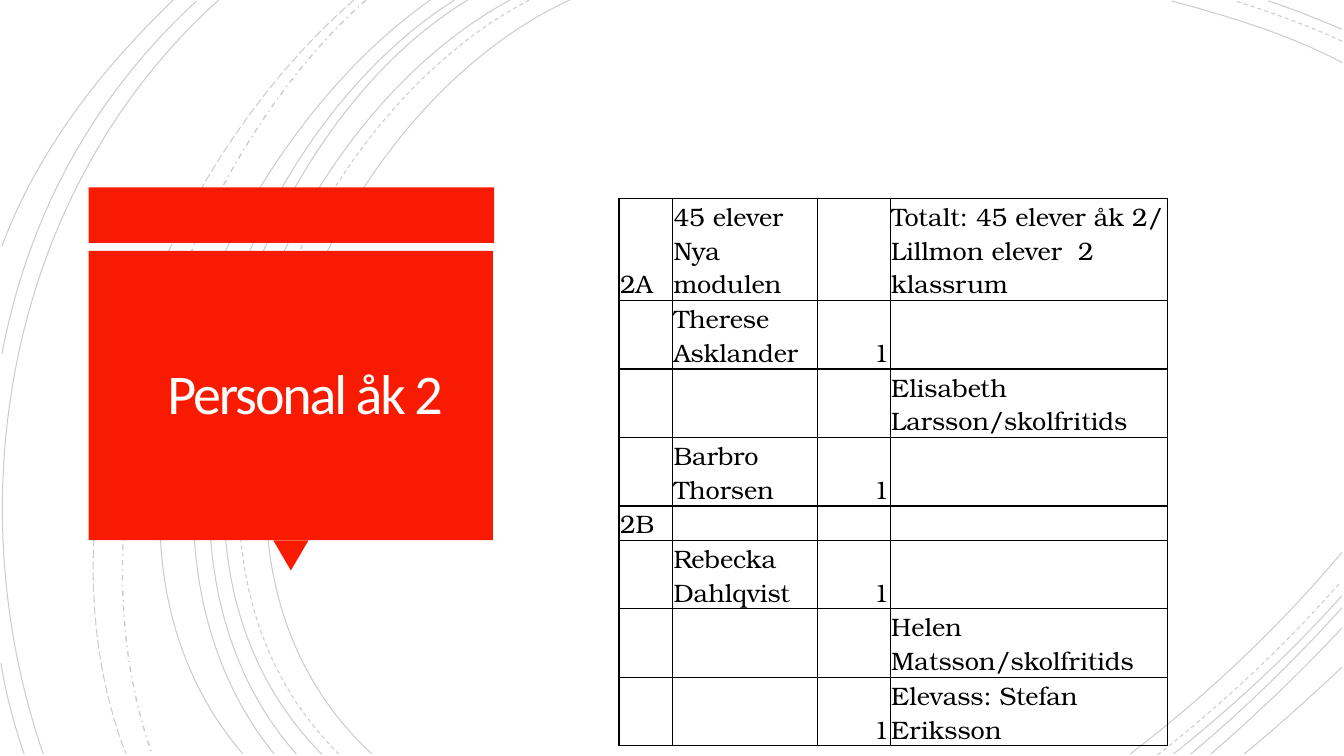
from lxml import etree
from pptx import Presentation
from pptx.dml.color import RGBColor
from pptx.enum.dml import MSO_LINE
from pptx.enum.shapes import MSO_SHAPE
from pptx.enum.text import MSO_ANCHOR, PP_ALIGN
from pptx.oxml import parse_xml
from pptx.oxml.ns import nsdecls, qn
from pptx.util import Inches, Pt

RED = RGBColor(0xF8, 0x1B, 0x02)
WHITE = RGBColor(0xFF, 0xFF, 0xFF)
BLACK = RGBColor(0x00, 0x00, 0x00)

SOLID, DASH = MSO_LINE.SOLID, MSO_LINE.DASH
LONG_DASH, DASH_DOT = MSO_LINE.LONG_DASH, MSO_LINE.DASH_DOT
RECTANGLE, TRIANGLE = MSO_SHAPE.RECTANGLE, MSO_SHAPE.ISOSCELES_TRIANGLE
MIDDLE, BOTTOM = MSO_ANCHOR.MIDDLE, MSO_ANCHOR.BOTTOM
LEFT, CENTER, RIGHT = PP_ALIGN.LEFT, PP_ALIGN.CENTER, PP_ALIGN.RIGHT

# Start, two control points and end of each arc, then its dash and width
ARCS = [
    ((5.65, 0), (3.15, 1.15), (1.43, 5.4), (3.69, 7.48), SOLID, 0.75),
    ((13.31, 0.62), (12.78, 0.34), (12.18, 0.16), (11.62, 0.01), SOLID, 0.75),
    ((11.21, 7.48), (11.97, 6.9), (12.69, 6.22), (13.31, 5.48), SOLID, 0.75),
    ((5.25, 0), (2.85, 1.25), (1.23, 5.37), (3.36, 7.48), DASH, 0.75),
    ((13.31, 0.41), (12.97, 0.25), (12.6, 0.12), (12.25, 0.01), DASH, 0.75),
    ((11.48, 7.49), (12.13, 6.98), (12.75, 6.4), (13.3, 5.77), DASH, 0.75),
    ((5.06, 0), (2.7, 1.27), (1.1, 5.37), (3.19, 7.48), SOLID, 0.75),
    ((13.31, 0.29), (13.07, 0.19), (12.83, 0.09), (12.58, 0.01), SOLID, 0.75),
    ((11.64, 7.48), (12.23, 7.01), (12.8, 6.48), (13.31, 5.91), SOLID, 0.75),
    ((4.64, 0), (2.44, 1.33), (1.1, 5.41), (2.94, 7.48), SOLID, 0.75),
    ((11.81, 7.48), (12.34, 7.04), (12.84, 6.55), (13.31, 6.03), SOLID, 0.75),
    ((4.51, 0), (2.31, 1.38), (0.97, 5.33), (2.72, 7.48), SOLID, 0.75),
    ((12.01, 7.48), (12.46, 7.09), (12.9, 6.67), (13.31, 6.23), SOLID, 0.75),
    ((4.27, 0), (2.17, 1.47), (0.53, 5.29), (2.41, 7.48), SOLID, 0.75),
    ((12.34, 7.48), (12.67, 7.21), (12.99, 6.92), (13.31, 6.62), SOLID, 0.75),
    ((3.63, 0), (1.76, 1.66), (0.65, 5.09), (1.51, 7.48), DASH_DOT, 1),
    ((3.51, 0), (1.57, 1.69), (0.29, 4.99), (1.25, 7.48), LONG_DASH, 0.75),
    ((2.17, 0), (0.11, 1.85), (-0.46, 4.9), (0.43, 7.48), SOLID, 0.75),
    ((1.95, 0.01), (0.92, 0.96), (0.28, 2.14), (0.02, 3.51), SOLID, 0.75),
    ((0.01, 6.58), (0.06, 6.89), (0.14, 7.19), (0.24, 7.48), SOLID, 0.75),
    ((1.72, 0), (1, 0.69), (0.37, 1.5), (0.02, 2.44), SOLID, 0.75),
]

# Row height, then the texts of its cells
STAFF = [
    (1.01, "2A", "45 elever  Nya modulen", "", "Totalt: 45 elever åk 2/ Lillmon elever  2 klassrum"),
    (0.68, "", "Therese Asklander", "1", ""),
    (0.68, "", "", "", "Elisabeth Larsson/skolfritids"),
    (0.68, "", "Barbro Thorsen", "1", ""),
    (0.34, "2B", "", "", ""),
    (0.68, "", "Rebecka Dahlqvist", "1", ""),
    (0.68, "", "", "", "Helen Matsson/skolfritids"),
    (0.68, "", "", "1", "Elevass: Stefan Eriksson"),
]
COLUMN_WIDTHS = (0.53, 1.44, 0.72, 2.75)
COUNT_COLUMN = 2


def set_font(para, name, size, color):
    para.font.name = name
    para.font.size = Pt(size)
    para.font.color.rgb = color


def add_arc(page, start, control_1, control_2, end, dash, width):
    """Draw a faint cubic curve: three line segments turned into one Bezier."""
    points = [(Inches(x), Inches(y)) for x, y in (control_1, control_2, end)]
    builder = page.shapes.build_freeform(Inches(start[0]), Inches(start[1]))
    builder.add_line_segments(points, close=False)
    arc = builder.convert_to_shape()
    arc.shadow.inherit = False
    arc.fill.background()
    arc.line.color.rgb = BLACK
    arc.line.width = Pt(width)
    arc.line.dash_style = dash

    outline = next(arc.element.iter(qn("a:path")))
    segments = outline.findall(qn("a:lnTo"))
    curve = etree.SubElement(outline, qn("a:cubicBezTo"))
    for segment in segments:
        curve.append(segment[0])
        outline.remove(segment)
    line_color = next(arc.element.iter(qn("a:srgbClr")))
    etree.SubElement(line_color, qn("a:alpha"), val="20000")


def add_red_shape(page, kind, left, top, width, height, rotation=0):
    shape = page.shapes.add_shape(
        kind, Inches(left), Inches(top), Inches(width), Inches(height))
    shape.shadow.inherit = False
    shape.fill.solid()
    shape.fill.fore_color.rgb = RED
    shape.line.fill.background()
    shape.rotation = rotation


def add_title(page, text):
    box = page.shapes.add_textbox(Inches(1.02), Inches(2.43), Inches(4.01), Inches(3.02))
    frame = box.text_frame
    frame.word_wrap = True
    frame.vertical_anchor = MIDDLE
    frame.margin_left = frame.margin_right = Inches(0.25)
    frame.margin_top = frame.margin_bottom = Inches(0.25)
    para = frame.paragraphs[0]
    para.alignment = CENTER
    para.line_spacing = 0.85
    set_font(para, "Calibri", 40, WHITE)
    span = para.add_run()
    span.text = text
    span.font._element.set("spc", "-150")


def add_borders(cell):
    properties = cell._tc.get_or_add_tcPr()
    for side in ("lnL", "lnR", "lnT", "lnB"):
        properties.append(parse_xml(
            f'<a:{side} {nsdecls("a")} w="{Pt(1)}"><a:solidFill>'
            f'<a:srgbClr val="{BLACK}"/></a:solidFill></a:{side}>'))


def fill_cell(cell, text, alignment):
    cell.margin_left = cell.margin_right = cell.margin_top = Inches(0.01)
    cell.margin_bottom = 0
    cell.vertical_anchor = BOTTOM
    cell.text = text
    para = cell.text_frame.paragraphs[0]
    para.alignment = alignment
    set_font(para, "TeX Gyre Bonum", 18, BLACK)
    add_borders(cell)
    cell.fill.background()


def add_staff_table(page):
    total_height = sum(height for height, *_ in STAFF)
    table = page.shapes.add_table(
        len(STAFF), len(COLUMN_WIDTHS), Inches(6.14), Inches(1.97),
        Inches(sum(COLUMN_WIDTHS)), Inches(total_height)).table
    table.first_row = table.horz_banding = False
    for column, width in zip(table.columns, COLUMN_WIDTHS):
        column.width = Inches(width)
    for row, (height, *texts) in zip(table.rows, STAFF):
        row.height = Inches(height)
        for index, text in enumerate(texts):
            fill_cell(row.cells[index], text, RIGHT if index == COUNT_COLUMN else LEFT)


def main():
    deck = Presentation()
    deck.slide_width, deck.slide_height = Inches(13.33), Inches(7.5)
    page = deck.slides.add_slide(deck.slide_layouts[6])
    for arc in ARCS:
        add_arc(page, *arc)
    add_red_shape(page, RECTANGLE, 0.88, 1.86, 4.02, 0.55)
    add_red_shape(page, TRIANGLE, 2.71, 5.36, 0.35, 0.3, rotation=180)
    add_red_shape(page, RECTANGLE, 0.88, 2.49, 4.01, 2.87)
    add_title(page, "Personal åk 2")
    add_staff_table(page)
    deck.save("out.pptx")


if __name__ == "__main__":
    main()
